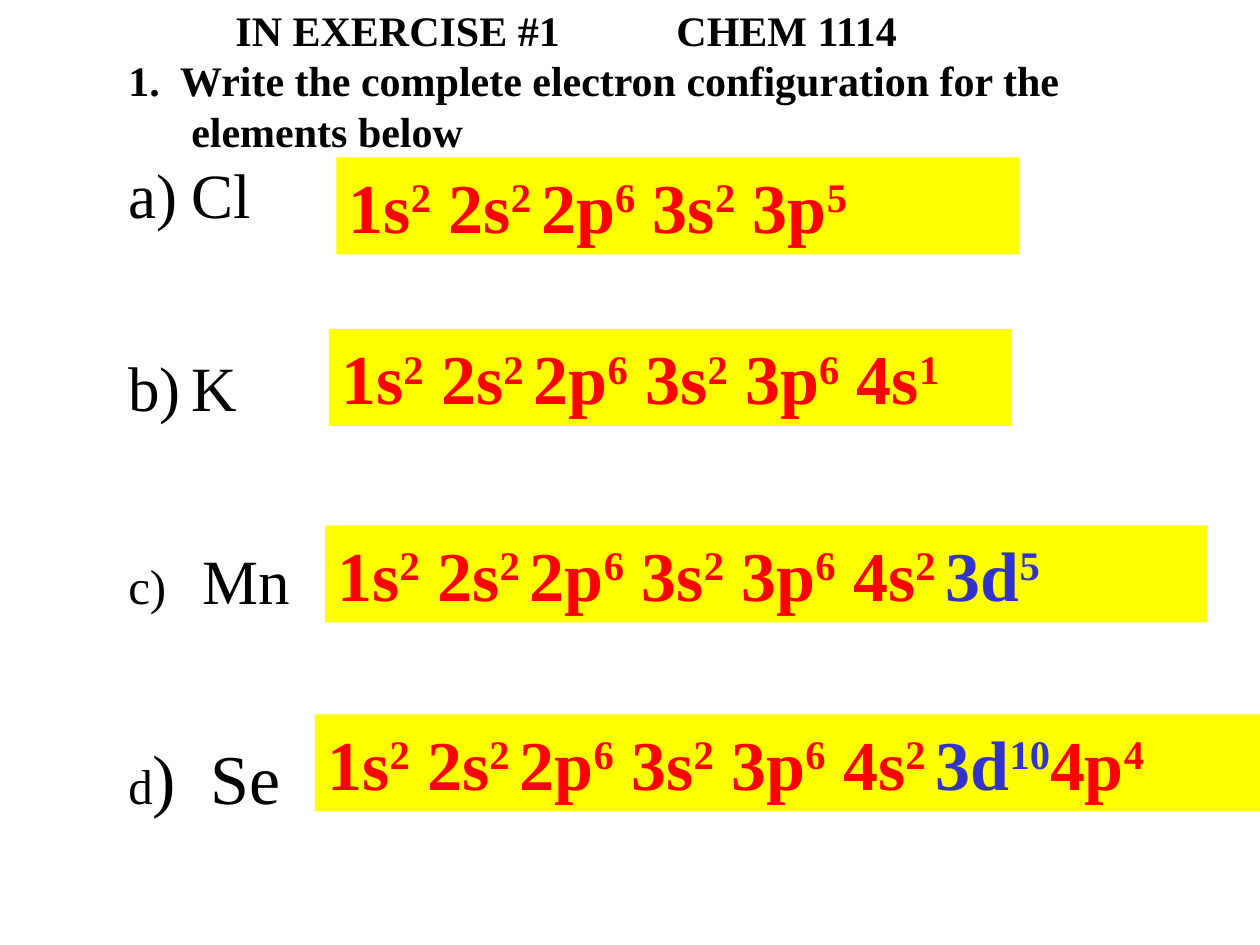
from dataclasses import dataclass

from pptx import Presentation
from pptx.dml.color import RGBColor as Rgb
from pptx.enum.shapes import MSO_SHAPE as Preset
from pptx.enum.text import MSO_ANCHOR as Anchor, PP_ALIGN as Align
from pptx.oxml.ns import qn
from pptx.slide import Slide
from pptx.text.text import TextFrame, _Paragraph as Paragraph
from pptx.util import Inches, Pt
from lxml.etree import SubElement


@dataclass(frozen=True)
class Theme:
    font: str = "Times New Roman"
    ink: Rgb = Rgb(0, 0, 0)
    answer: Rgb = Rgb(0xFF, 0, 0)
    d_orbital: Rgb = Rgb(0x33, 0x33, 0xCC)
    highlight: Rgb = Rgb(0xFF, 0xFF, 0)
    heading_size: int = 24
    label_size: int = 28
    element_size: int = 36
    answer_size: int = 40


THEME = Theme()


@dataclass(frozen=True)
class Piece:
    text: str
    size: int
    bold: bool = False
    color: Rgb = THEME.ink
    superscript: bool = False


@dataclass(frozen=True)
class Line:
    pieces: tuple[Piece, ...]
    margin: float = 0.5
    hanging: float = 0.5
    space_before: int = 0
    number: int = 0


@dataclass(frozen=True)
class Answer:
    left: float
    top: float
    width: float
    configuration: str


ITEM_GAP = 67
QUESTION = (
    Line((Piece("IN EXERCISE #1\tCHEM 1114", THEME.heading_size, True),), 4.35, 3.5),
    Line((Piece("1.  Write the complete electron configuration for the elements below",
                THEME.heading_size, True),)),
    Line((Piece("Cl", THEME.element_size),), number=1),
    Line((Piece("K", THEME.element_size),), space_before=ITEM_GAP, number=2),
    Line((Piece("c)\t", THEME.label_size), Piece("Mn", THEME.element_size)),
         0.59, 0.59, ITEM_GAP),
    Line((Piece("d", THEME.label_size), Piece(")\tSe", THEME.answer_size)),
         0.65, 0.65, ITEM_GAP),
)

NEON_CORE = "1s|2| 2s|2 |2p|6| 3s|2"
ARGON_CORE = NEON_CORE + "| 3p|6"
ANSWERS = (
    Answer(2.67, 1.25, 5.42, NEON_CORE + "| 3p|5"),
    Answer(2.61, 2.61, 5.42, ARGON_CORE + "| 4s|1"),
    Answer(2.58, 4.17, 7, ARGON_CORE + "| 4s|2 |3d|5"),
    Answer(2.5, 5.67, 7.5, ARGON_CORE + "| 4s|2 |3d|10|4p|4"),
)


def add_piece(paragraph: Paragraph, piece: Piece) -> None:
    run = paragraph.add_run()
    run.text = piece.text
    run.font.name = THEME.font
    run.font.size = Pt(piece.size)
    run.font.bold = piece.bold
    run.font.color.rgb = piece.color
    if piece.superscript:
        run._r.get_or_add_rPr().set("baseline", "30000")


def fill_line(paragraph: Paragraph, line: Line) -> None:
    paragraph.alignment = Align.LEFT
    paragraph.space_before = Pt(line.space_before)
    properties = paragraph._p.get_or_add_pPr()
    properties.set("marL", str(Inches(line.margin)))
    properties.set("indent", str(-Inches(line.hanging)))
    if line.number:
        SubElement(properties, qn("a:buFont"), typeface=THEME.font)
        SubElement(properties, qn("a:buAutoNum"), type="alphaLcParenR",
                   startAt=str(line.number))
    for piece in line.pieces:
        add_piece(paragraph, piece)


def add_question(slide: Slide, lines: tuple[Line, ...]) -> None:
    box = slide.shapes.add_textbox(Inches(0.92), Inches(-0.05), Inches(8.42), Inches(6.63))
    frame: TextFrame = box.text_frame
    frame.word_wrap = True
    frame.vertical_anchor = Anchor.MIDDLE
    for index, line in enumerate(lines):
        fill_line(frame.add_paragraph() if index else frame.paragraphs[0], line)


def add_answer(slide: Slide, answer: Answer) -> None:
    panel = slide.shapes.add_shape(Preset.RECTANGLE, Inches(answer.left), Inches(answer.top),
                                   Inches(answer.width), Inches(0.77))
    panel.shadow.inherit = False
    panel.fill.solid()
    panel.fill.fore_color.rgb = THEME.highlight
    panel.line.fill.background()
    panel.text_frame.word_wrap = True
    panel.text_frame.vertical_anchor = Anchor.TOP
    paragraph = panel.text_frame.paragraphs[0]
    paragraph.alignment = Align.LEFT
    color = THEME.answer
    for index, text in enumerate(answer.configuration.split("|")):
        is_count = index % 2 == 1
        if not is_count:
            color = THEME.d_orbital if text.endswith("d") else THEME.answer
        add_piece(paragraph, Piece(text, THEME.answer_size, True, color, is_count))


def main() -> None:
    deck = Presentation()
    deck.slide_width, deck.slide_height = Inches(10), Inches(7.5)
    slide = deck.slides.add_slide(deck.slide_layouts[6])
    add_question(slide, QUESTION)
    for answer in ANSWERS:
        add_answer(slide, answer)
    deck.save("out.pptx")


if __name__ == "__main__":
    main()
